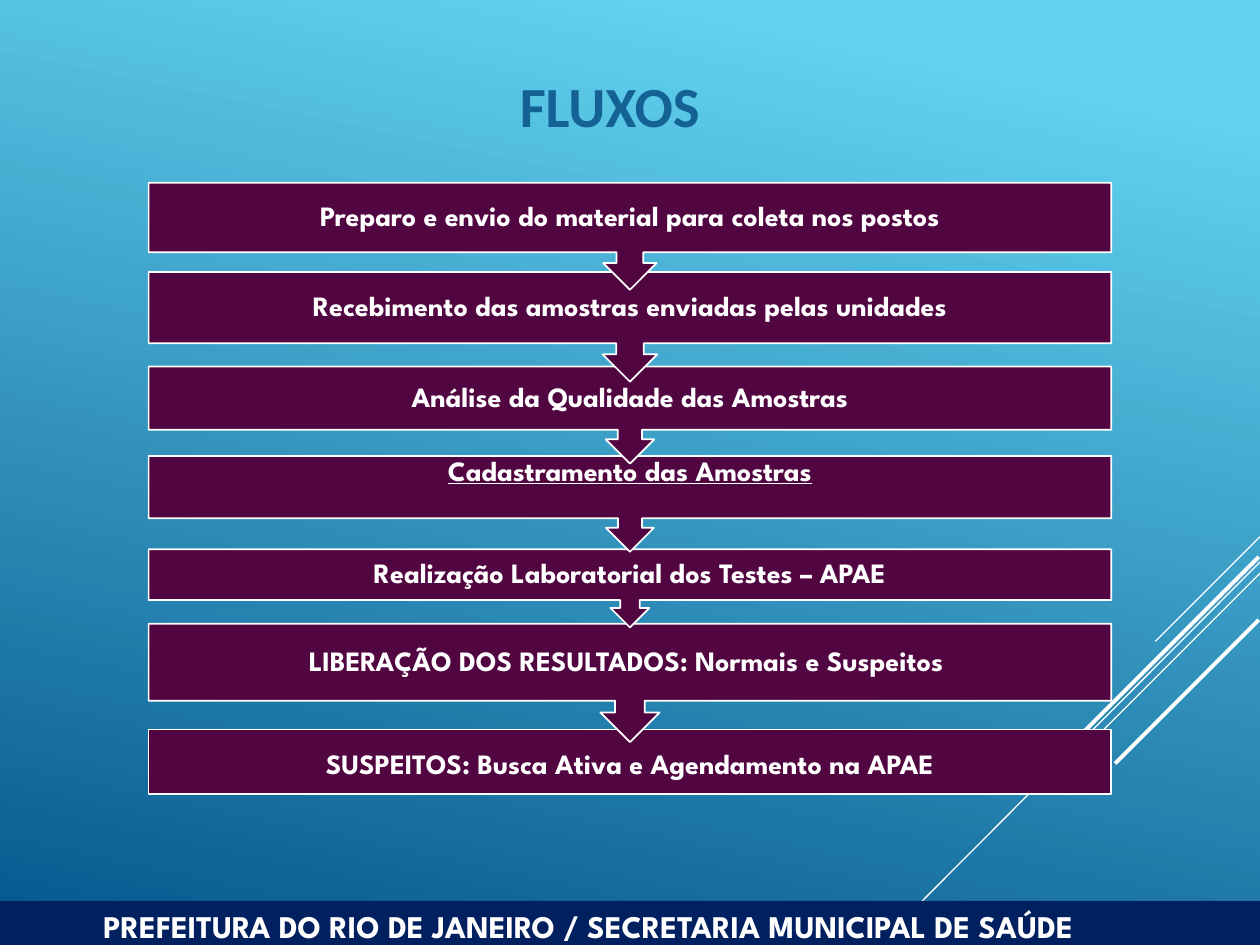
from dataclasses import dataclass

from lxml import etree
from pptx import Presentation
from pptx import util as u
from pptx.dml.color import RGBColor
from pptx.enum import shapes, text
from pptx.oxml import ns


@dataclass(frozen=True)
class Theme:
    sky: RGBColor = RGBColor.from_string("62D2EF")
    deep: RGBColor = RGBColor.from_string("05578D")
    title: RGBColor = RGBColor.from_string("146194")
    step: RGBColor = RGBColor.from_string("520641")
    footer: RGBColor = RGBColor.from_string("002060")
    white: RGBColor = RGBColor.from_string("FFFFFF")
    title_font: str = "Calibri"
    body_font: str = "League Spartan"
    title_size: float = 32.4
    step_size: float = 16
    footer_size: float = 18


THEME = Theme()

# Start and end of each diagonal, then its width in points
DIAGONALS = [
    (10, 4.26, 9.17, 5.09, 0.75),
    (10, 4.46, 7.3, 7.17, 0.75),
    (10, 4.55, 8.28, 6.27, 0.75),
    (9.99, 4.42, 8.42, 5.99, 2.25),
    (9.99, 4.92, 8.85, 6.06, 2.25),
]

# Text, top, height including the arrow, downward shift of the text
STEPS = [
    ("Preparo e envio do material para coleta nos postos", 1.45, 0.85, 0),
    ("Recebimento das amostras enviadas pelas unidades", 2.16, 0.87, 0),
    ("Análise da Qualidade das Amostras", 2.91, 0.77, 0),
    ("Cadastramento das Amostras", 3.62, 0.76, -0.12),
    ("Realização Laboratorial dos Testes – APAE", 4.36, 0.62, 0),
    ("LIBERAÇÃO DOS RESULTADOS: Normais e Suspeitos ", 4.95, 0.94, 0),
    ("SUSPEITOS: Busca Ativa e Agendamento na APAE", 5.79, 0.51, 0.03),
]
UNDERLINED_STEP = 3


def inches(*lengths):
    return [u.Inches(length) for length in lengths]


def style_text(paragraph, font_name, size, color):
    font = paragraph.font
    font.name, font.size, font.bold = font_name, u.Pt(size), True
    font.color.rgb = color


def set_margins(frame, left, top, right, bottom):
    frame.margin_left, frame.margin_top, frame.margin_right, frame.margin_bottom = inches(
        left, top, right, bottom)


def add_background(slide):
    fill = slide.background.fill
    fill.gradient()
    fill.gradient_angle = 258
    for stop, color, position in zip(fill.gradient_stops, (THEME.sky, THEME.deep), (0.1, 1)):
        stop.color.rgb = color
        stop.position = position


def add_diagonals(slide):
    for *ends, width in DIAGONALS:
        line = slide.shapes.add_connector(shapes.MSO_CONNECTOR.STRAIGHT, *inches(*ends))
        line.line.color.rgb = THEME.white
        line.line.width = u.Pt(width)
        etree.SubElement(line._element.spPr, ns.qn("a:effectLst"))


def add_title(slide, box):
    title = slide.shapes.title
    title.left, title.top, title.width, title.height = inches(*box)
    frame = title.text_frame
    frame.text = "FLUXOS"
    frame.vertical_anchor = text.MSO_ANCHOR.MIDDLE
    paragraph = frame.paragraphs[0]
    paragraph.alignment = text.PP_ALIGN.CENTER
    style_text(paragraph, THEME.title_font, THEME.title_size, THEME.title)


def add_step(slide, kind, box, label, shift):
    shape = slide.shapes.add_shape(kind, *inches(*box))
    shape.shadow.inherit = False
    shape.fill.solid()
    shape.fill.fore_color.rgb = THEME.step
    shape.line.color.rgb = THEME.white
    shape.line.width = u.Pt(1)
    frame = shape.text_frame
    frame.word_wrap = True
    frame.vertical_anchor = text.MSO_ANCHOR.MIDDLE
    set_margins(frame, 0.12, max(2 * shift, 0), 0.12, max(-2 * shift, 0))
    frame.text = label
    paragraph = frame.paragraphs[0]
    paragraph.alignment = text.PP_ALIGN.CENTER
    paragraph.line_spacing = 0.9
    style_text(paragraph, THEME.body_font, THEME.step_size, THEME.white)
    return shape


def add_flow(slide, left, width):
    # From the last step up, so that each arrow overlaps the step below it
    last = len(STEPS) - 1
    for index in range(last, -1, -1):
        label, top, height, shift = STEPS[index]
        is_last = index == last
        kind = shapes.MSO_SHAPE.RECTANGLE if is_last else shapes.MSO_SHAPE.DOWN_ARROW_CALLOUT
        shape = add_step(slide, kind, (left, top, width, height), label, shift)
        if not is_last:
            for number, value in enumerate((0.25, 0.25, 0.25, 0.65)):
                shape.adjustments[number] = value
        if index == UNDERLINED_STEP:
            shape.text_frame.paragraphs[0].font.underline = True


def add_footer(slide, box):
    band = slide.shapes.add_shape(shapes.MSO_SHAPE.RECTANGLE, *inches(*box))
    band.shadow.inherit = False
    band.fill.solid()
    band.fill.fore_color.rgb = THEME.footer
    band.line.fill.background()
    frame = band.text_frame
    frame.word_wrap = True
    frame.vertical_anchor = text.MSO_ANCHOR.TOP
    set_margins(frame, 0.82, 0.05, 0.1, 0.05)
    frame.text = "PREFEITURA DO RIO DE JANEIRO / SECRETARIA MUNICIPAL DE SAÚDE"
    paragraph = frame.paragraphs[0]
    paragraph.alignment = text.PP_ALIGN.LEFT
    style_text(paragraph, THEME.body_font, THEME.footer_size, THEME.white)


def main():
    presentation = Presentation()
    presentation.slide_width, presentation.slide_height = inches(10, 7.5)
    slide = presentation.slides.add_slide(presentation.slide_layouts[5])
    add_background(slide)
    add_diagonals(slide)
    add_title(slide, (0.26, 0.44, 9.16, 0.79))
    add_flow(slide, 1.18, 7.64)
    add_footer(slide, (0, 7.15, 10, 0.4))
    presentation.save("out.pptx")


if __name__ == "__main__":
    main()
